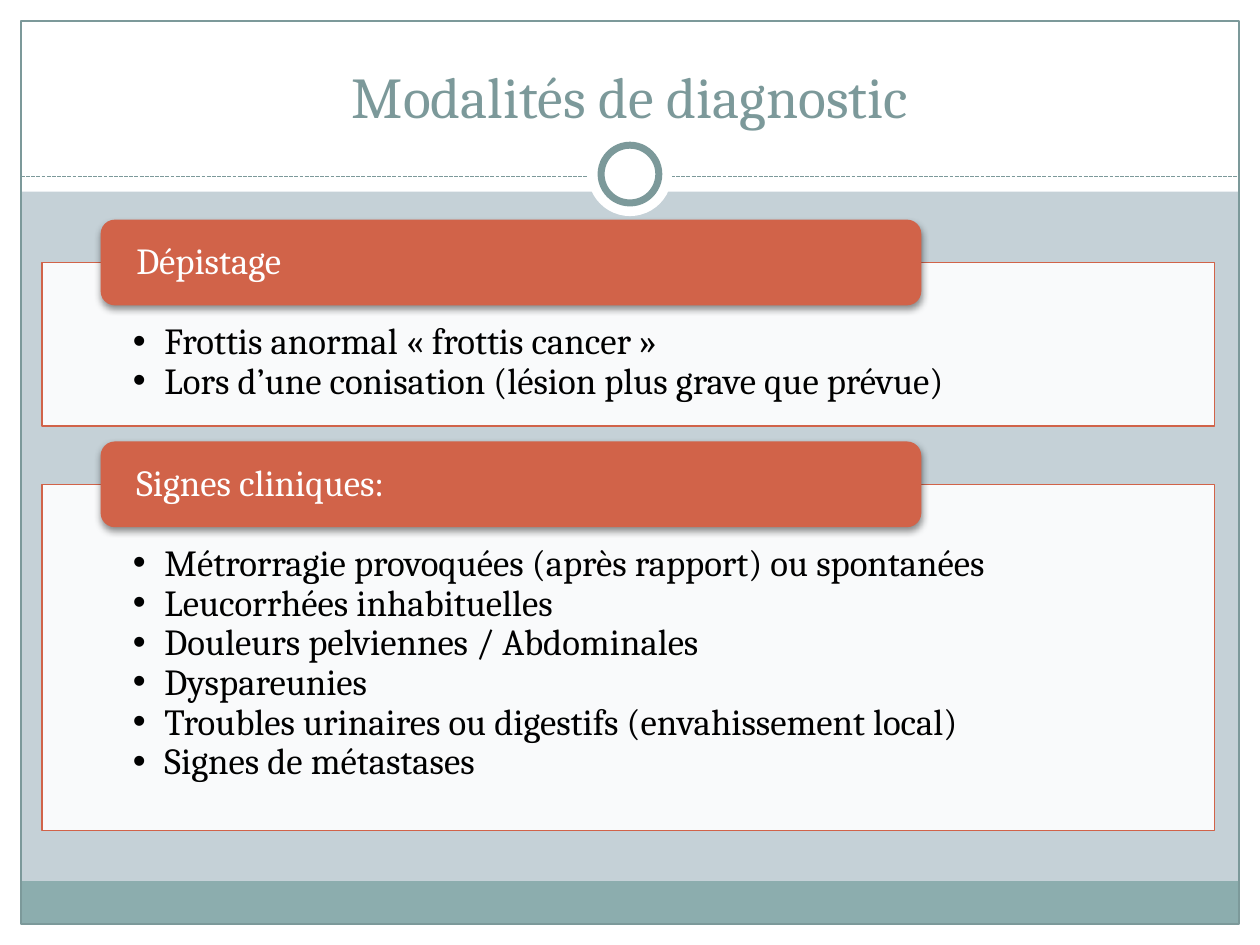
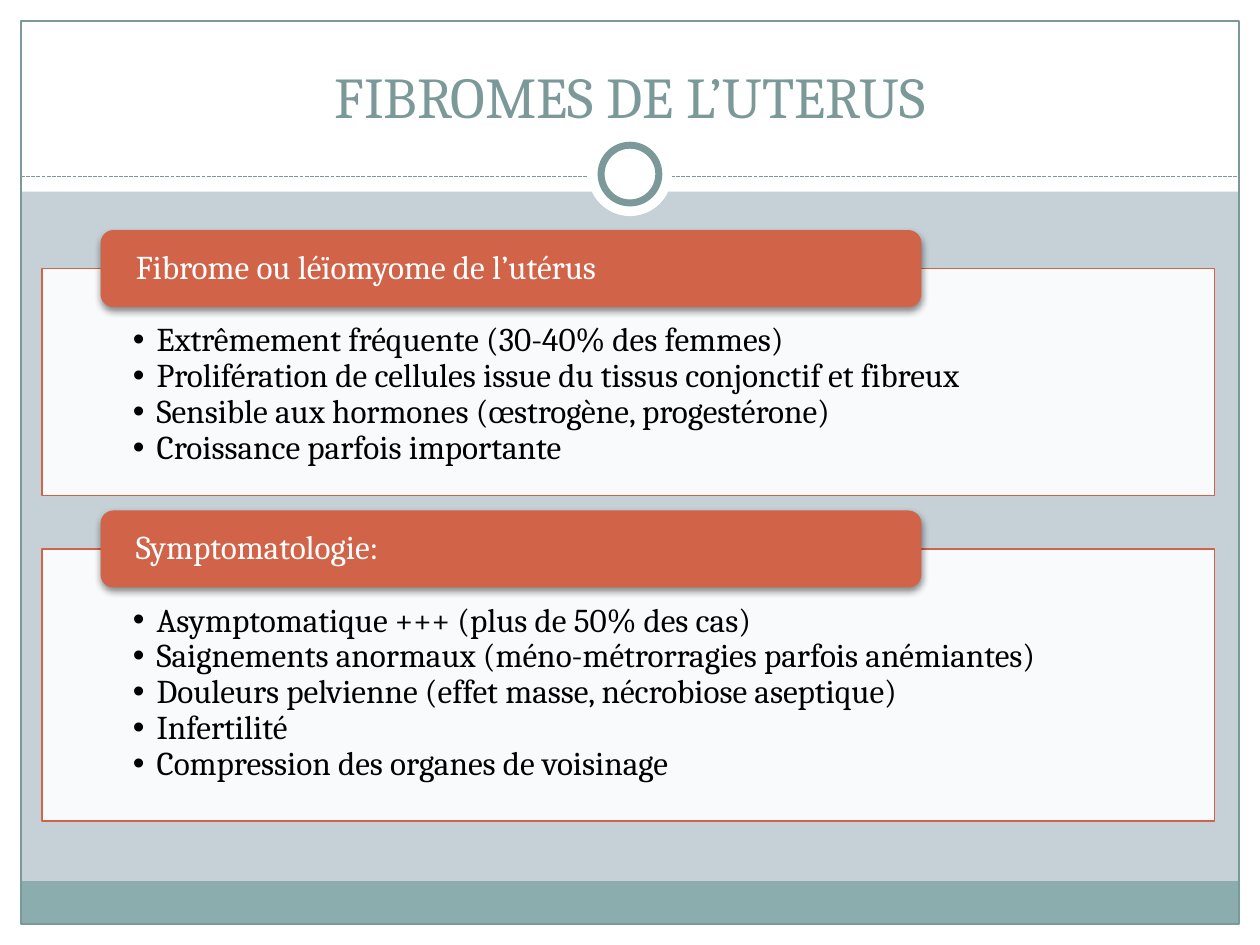
from lxml import etree
from pptx import Presentation
from pptx.dml import color
from pptx.enum import dml, shapes, text
from pptx.oxml import ns
from pptx.util import Pt

FONT = "Cambria"
TEAL, BAND, MIST = "7C999A", "8CADAE", "C5D1D7"
RUST, WHITE, BLACK = "D16349", "FFFFFF", "000000"
WIDTH, HEIGHT, MARGIN = 720, 540, 12
BAND_TOP, BAND_HEIGHT, RULE_TOP = 503.5, 24, 101
TITLE_BOX = (24, 18, 672, 60)
PANEL_LEFT, PANEL_WIDTH, PANEL_GAP, PANEL_INSET = 24, 670, 8.75, 52
TAB_LEFT, TAB_WIDTH, TAB_INSET = 57.5, 469, 18

SLIDES = [
    dict(title="Modalités de diagnostic", size=21, top=125.5, tab_height=49,
         insets=(34.5, 11.5), indent=18, sections=[
             ("Dépistage", 93.5, [
                 "Frottis anormal « frottis cancer »",
                 "Lors d’une conisation (lésion plus grave que prévue)"]),
             ("Signes cliniques:", 198, [
                 "Métrorragie provoquées (après rapport) ou spontanées",
                 "Leucorrhées inhabituelles",
                 "Douleurs pelviennes / Abdominales",
                 "Dyspareunies",
                 "Troubles urinaires ou digestifs (envahissement local)",
                 "Signes de métastases"])]),
    dict(title="FIBROMES DE L’UTERUS", size=19, top=131.5, tab_height=44,
         insets=(31, 11), indent=13.5, sections=[
             ("Fibrome ou léïomyome de l’utérus", 129.5, [
                 "Extrêmement fréquente (30-40% des femmes)",
                 "Prolifération de cellules issue du tissus conjonctif et fibreux",
                 "Sensible aux hormones (œstrogène, progestérone)",
                 "Croissance parfois importante"]),
             ("Symptomatologie:", 155.5, [
                 "Asymptomatique +++ (plus de 50% des cas)",
                 "Saignements anormaux (méno-métrorragies parfois anémiantes)",
                 "Douleurs pelvienne (effet masse, nécrobiose aseptique)",
                 "Infertilité",
                 "Compression des organes de voisinage"])]),
]


def rgb(value):
    return color.RGBColor.from_string(value)


def add_xml(parent, tag, **attributes):
    return etree.SubElement(parent, ns.qn(tag), attributes)


class Deck:
    """Hold the shared style and the current slide."""

    def __init__(self):
        self.presentation = Presentation()
        self.presentation.slide_width = Pt(WIDTH)
        self.presentation.slide_height = Pt(HEIGHT)
        self.layout = self.presentation.slide_layouts[3]
        self.slide = None

    def add_slide(self):
        self.slide = self.presentation.slides.add_slide(self.layout)

    def place(self, shape, box):
        shape.left, shape.top, shape.width, shape.height = map(Pt, box)

    def paint(self, shape, fill=None, line=None, weight=0.75):
        if fill:
            shape.fill.solid()
            shape.fill.fore_color.rgb = rgb(fill)
        else:
            shape.fill.background()
        if line:
            shape.line.color.rgb = rgb(line)
            shape.line.width = Pt(weight)
        else:
            shape.line.fill.background()

    def add_shape(self, kind, box, fill=None, line=None, weight=0.75):
        shape = self.slide.shapes.add_shape(kind, *map(Pt, box))
        self.paint(shape, fill, line, weight)
        shape.shadow.inherit = False
        return shape

    def add_rule(self, top):
        rule = self.slide.shapes.add_connector(
            shapes.MSO_CONNECTOR.STRAIGHT, Pt(MARGIN), Pt(top), Pt(WIDTH - MARGIN), Pt(top))
        rule.line.color.rgb = rgb(TEAL)
        rule.line.width = Pt(0.75)
        rule.line.dash_style = dml.MSO_LINE.SQUARE_DOT
        rule._element.spPr.find(ns.qn("a:ln")).find(ns.qn("a:prstDash")).set("val", "sysDash")
        add_xml(rule._element.spPr, "a:effectLst")

    def add_circle(self, diameter, center, line=None):
        box = ((WIDTH - diameter) / 2, center - diameter / 2, diameter, diameter)
        self.add_shape(shapes.MSO_SHAPE.OVAL, box, WHITE, line, 4)

    def add_frame(self):
        rectangle = shapes.MSO_SHAPE.RECTANGLE
        inner = WIDTH - 2 * MARGIN
        for box in [(0, HEIGHT - MARGIN, WIDTH, MARGIN), (0, 0, WIDTH, 109.5),
                    (0, 0, MARGIN, HEIGHT), (WIDTH - MARGIN, 0, MARGIN, HEIGHT)]:
            self.add_shape(rectangle, box, WHITE)
        self.add_shape(rectangle, (MARGIN, BAND_TOP, inner, BAND_HEIGHT), BAND)
        self.add_shape(rectangle, (MARGIN, MARGIN, inner, HEIGHT - 2 * MARGIN), line=TEAL)
        self.add_rule(RULE_TOP)
        self.add_circle(48, 99.5)
        self.add_circle(33, 99.5, TEAL)

    def share_frame(self):
        self.layout.background.fill.solid()
        self.layout.background.fill.fore_color.rgb = rgb(MIST)
        self.add_frame()
        tree = self.layout.shapes._spTree
        frame = [shape for shape in self.slide.shapes if not shape.is_placeholder]
        for number, shape in enumerate(frame, 100):
            shape._element.xpath(".//p:cNvPr")[0].set("id", str(number))
            tree.append(shape._element)

    def set_text(self, shape, lines, size, ink, align, anchor, insets, spacing=1):
        frame = shape.text_frame
        frame.text = "\n".join(lines)
        frame.word_wrap = True
        frame.auto_size = text.MSO_AUTO_SIZE.NONE
        frame.vertical_anchor = anchor
        frame.margin_left, frame.margin_top, frame.margin_right, frame.margin_bottom = map(Pt, insets)
        for paragraph in frame.paragraphs:
            paragraph.alignment = align
            paragraph.line_spacing = spacing
            paragraph.space_before = paragraph.space_after = Pt(0)
            paragraph.font.name = FONT
            paragraph.font.size = Pt(size)
            paragraph.font.color.rgb = rgb(ink)

    def add_title(self, title):
        shape = self.slide.shapes.title
        self.place(shape, TITLE_BOX)
        self.set_text(shape, [title], 33, TEAL, text.PP_ALIGN.CENTER,
                      text.MSO_ANCHOR.BOTTOM, (7.2, 3.6, 7.2, 3.6))

    def add_panel(self, panel, box, lines, size, insets, indent):
        self.place(panel, box)
        self.paint(panel, WHITE, RUST)
        fill = panel._element.spPr.find(ns.qn("a:solidFill"))
        add_xml(fill[0], "a:alpha", val="90000")
        self.set_text(panel, lines, size, BLACK, text.PP_ALIGN.LEFT, text.MSO_ANCHOR.TOP,
                      (PANEL_INSET, insets[0], PANEL_INSET, insets[1]), 0.9)
        for paragraph in panel.text_frame.paragraphs:
            properties = paragraph._p.get_or_add_pPr()
            properties.set("marL", str(Pt(indent)))
            properties.set("indent", str(-Pt(indent)))

    def add_tab(self, top, height, label, size):
        tab = self.add_shape(shapes.MSO_SHAPE.ROUNDED_RECTANGLE,
                             (TAB_LEFT, top, TAB_WIDTH, height), RUST)
        effects = tab._element.spPr.find(ns.qn("a:effectLst"))
        shadow = add_xml(effects, "a:outerShdw", blurRad=str(Pt(4)), dist=str(Pt(2)),
                         dir="5400000", rotWithShape="0")
        add_xml(add_xml(shadow, "a:srgbClr", val=BLACK), "a:alpha", val="45000")
        self.set_text(tab, [label], size, WHITE, text.PP_ALIGN.LEFT, text.MSO_ANCHOR.MIDDLE,
                      (TAB_INSET, 0, TAB_INSET, 0), 0.9)

    def add_sections(self, sections, size, top, tab_height, insets, indent):
        panels = list(self.slide.placeholders)[1:]
        for panel, (label, height, lines) in zip(panels, sections):
            panel_top = top + tab_height / 2
            box = (PANEL_LEFT, panel_top, PANEL_WIDTH, height)
            self.add_panel(panel, box, lines, size, insets, indent)
            self.add_tab(top, tab_height, label, size)
            top = panel_top + height + PANEL_GAP


def main():
    deck = Deck()
    for index, content in enumerate(SLIDES):
        deck.add_slide()
        if index == 0:
            deck.share_frame()
        deck.add_title(content["title"])
        deck.add_sections(**{key: value for key, value in content.items() if key != "title"})
    deck.presentation.save("out.pptx")


if __name__ == "__main__":
    main()
